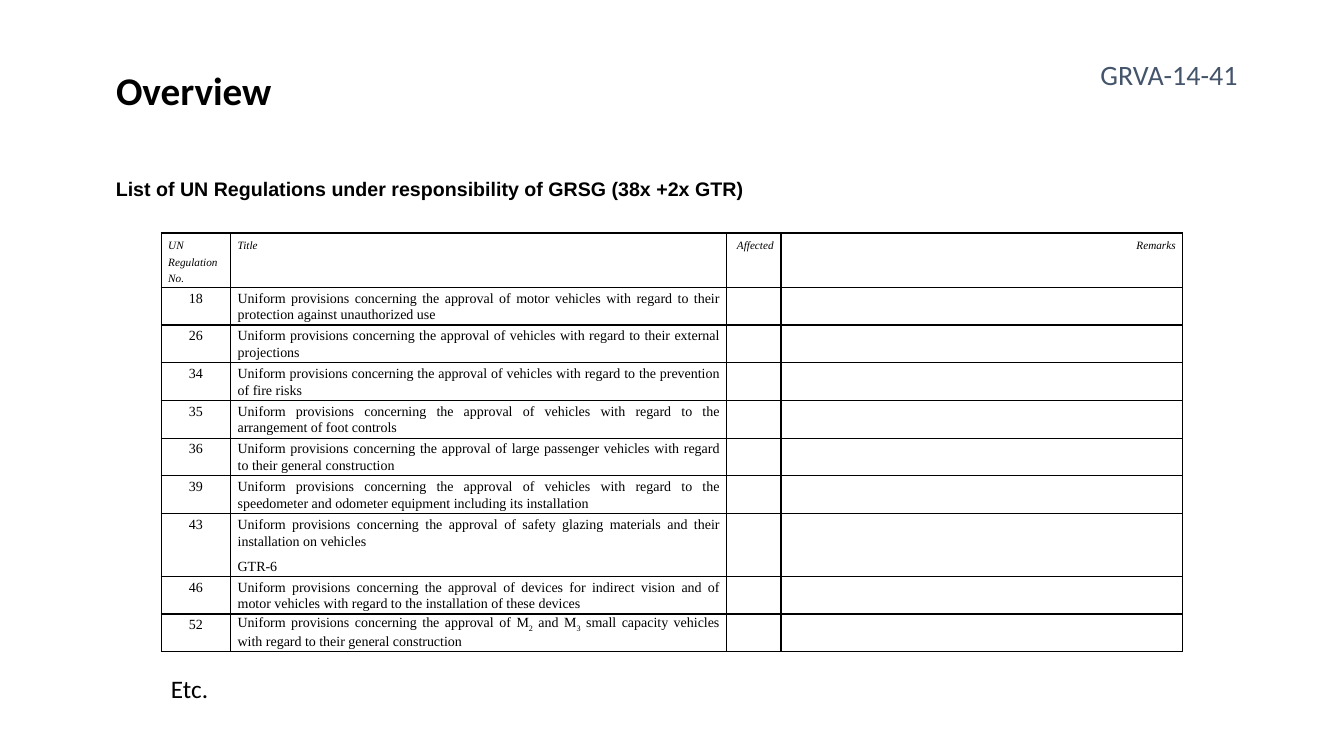
from dataclasses import dataclass

from lxml import etree
from pptx import Presentation
from pptx import util as u
from pptx.dml.color import RGBColor
from pptx.enum import text as t
from pptx.oxml import ns


@dataclass(frozen=True)
class Theme:
    ink: str = "000000"
    slate: str = "44546A"
    sans: str = "Calibri"
    head: str = "Arial"
    serif: str = "Times New Roman"
    title: float = 28
    tag: float = 20
    note: float = 18
    lead: float = 14
    body: float = 10
    label: float = 8


THEME = Theme()
LEFT, RIGHT = t.PP_ALIGN.LEFT, t.PP_ALIGN.RIGHT
MID, FULL = t.PP_ALIGN.CENTER, t.PP_ALIGN.JUSTIFY

COLS = (1.75, 12.5, 1.37, 10.13)
HEADS = (("UN Regulation No.", LEFT), ("Title", FULL),
         ("Affected", RIGHT), ("Remarks", RIGHT))
LEAD = "Uniform provisions concerning the approval of "
# Text between bars is set as a subscript; a line break starts a paragraph
RULES = (
    (18, "motor vehicles with regard to their protection against "
         "unauthorized use"),
    (26, "vehicles with regard to their external projections"),
    (34, "vehicles with regard to the prevention of fire risks"),
    (35, "vehicles with regard to the arrangement of foot controls"),
    (36, "large passenger vehicles with regard to their general "
         "construction"),
    (39, "vehicles with regard to the speedometer and odometer equipment "
         "including its installation"),
    (43, "safety glazing materials and their installation on vehicles\n"
         "GTR-6"),
    (46, "devices for indirect vision and of motor vehicles with regard to "
         "the installation of these devices"),
    (52, "M|2| and M|3| small capacity vehicles with regard to their "
         "general construction"),
)


def write(frame, words, size, font=THEME.sans, color=THEME.ink, bold=False,
          italic=False, align=LEFT, line=None, after=0):
    """Fill a text frame with formatted paragraphs."""
    for i, part in enumerate(words.split("\n")):
        para = frame.add_paragraph() if i else frame.paragraphs[0]
        para.alignment = align
        para.space_before, para.space_after = u.Pt(0), u.Pt(after)
        if line:
            para.line_spacing = u.Pt(line)
        if not part:
            para.font.size = u.Pt(size)
        for j, piece in enumerate(part.split("|") if part else ()):
            run = para.add_run()
            run.text = piece
            face = run.font
            face.name, face.size = font, u.Pt(size)
            face.bold, face.italic = bold, italic
            face.color.rgb = RGBColor.from_string(color)
            if j % 2:
                run._r.get_or_add_rPr().set("baseline", "-25000")


def place(shape, x, y, w, h):
    shape.left, shape.top = u.Cm(x), u.Cm(y)
    shape.width, shape.height = u.Cm(w), u.Cm(h)


def label(slide, box, words, size, wrap=True, anchor=t.MSO_ANCHOR.TOP,
          **style):
    shape = slide.shapes.add_textbox(*map(u.Cm, box))
    frame = shape.text_frame
    frame.word_wrap, frame.vertical_anchor = wrap, anchor
    write(frame, words, size, **style)


def border(cell):
    """Draw a thin line on all four sides of a cell."""
    props = cell._tc.get_or_add_tcPr()
    for side in ("lnL", "lnR", "lnT", "lnB"):
        edge = etree.SubElement(props, ns.qn(f"a:{side}"), w=str(u.Pt(1)))
        fill = etree.SubElement(edge, ns.qn("a:solidFill"))
        etree.SubElement(fill, ns.qn("a:srgbClr"), val=THEME.ink)


def entry(cell, words, size, **style):
    border(cell)
    cell.fill.background()
    cell.margin_left = cell.margin_right = u.Cm(0.18)
    cell.margin_top = cell.margin_bottom = u.Cm(0.05)
    write(cell.text_frame, words, size, font=THEME.serif, line=12, **style)


def grid(slide):
    shape = slide.shapes.add_table(
        len(RULES) + 1, len(COLS), u.Cm(4.06), u.Cm(5.87),
        u.Cm(sum(COLS)), u.Cm(10.5))
    table = shape.table
    table.first_row = table.horz_banding = False
    for col, width in zip(table.columns, COLS):
        col.width = u.Cm(width)

    # Header row
    table.rows[0].height = u.Cm(1.37)
    for cell, (words, align) in zip(table.rows[0].cells, HEADS):
        entry(cell, words, THEME.label, italic=True, align=align)

    # One row for each regulation
    for i, (num, words) in enumerate(RULES, 1):
        row = table.rows[i]
        row.height = u.Cm(1.58 if "\n" in words else 0.95)
        texts = (str(num), LEAD + words, "", "")
        for cell, body, align in zip(row.cells, texts,
                                     (MID, FULL, LEFT, LEFT)):
            entry(cell, body, THEME.body, align=align,
                  after=6 if align == FULL else 0)


def main():
    deck = Presentation()
    deck.slide_width, deck.slide_height = u.Cm(33.87), u.Cm(19.05)
    slide = deck.slides.add_slide(deck.slide_layouts[5])

    # Title
    title = slide.shapes.title
    place(title, 2.67, 1.55, 4.47, 1.45)
    frame = title.text_frame
    frame.auto_size, frame.word_wrap = t.MSO_AUTO_SIZE.NONE, False
    frame.vertical_anchor = t.MSO_ANCHOR.TOP
    write(frame, "Overview", THEME.title, bold=True)

    # Heading and table
    label(slide, (2.67, 4.11, 31.2, 1.27),
          "List of UN Regulations under responsibility of GRSG "
          "(38x +2x GTR)", THEME.lead, anchor=t.MSO_ANCHOR.MIDDLE,
          font=THEME.head, bold=True)
    grid(slide)

    # Closing note and document number
    label(slide, (4.06, 16.84, 1.47, 1.02), "Etc.", THEME.note, wrap=False)
    label(slide, (25.6, 1.32, 5.84, 1.42), "GRVA-14-41", THEME.tag,
          color=THEME.slate, align=RIGHT, after=12)

    deck.save("out.pptx")


if __name__ == "__main__":
    main()
